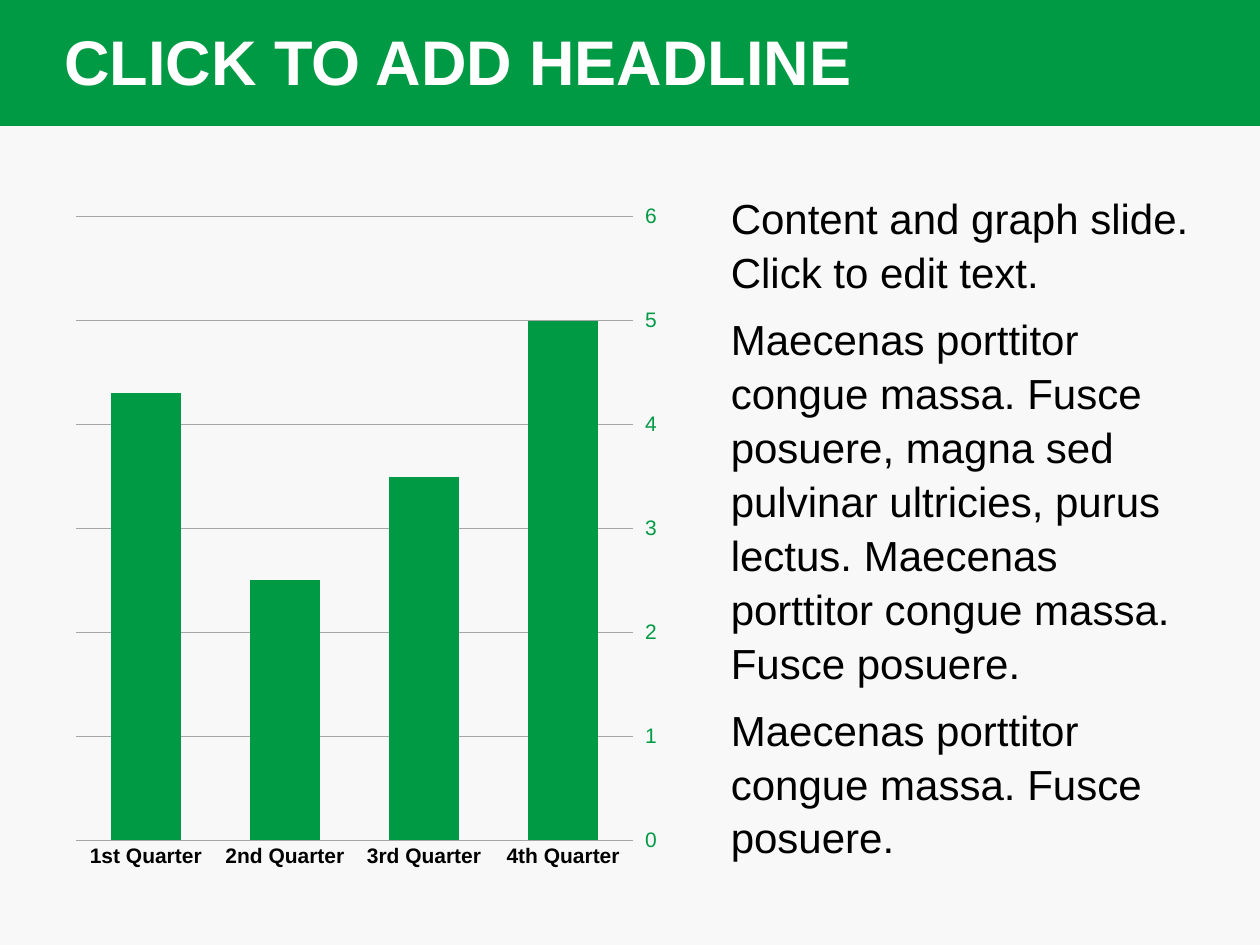
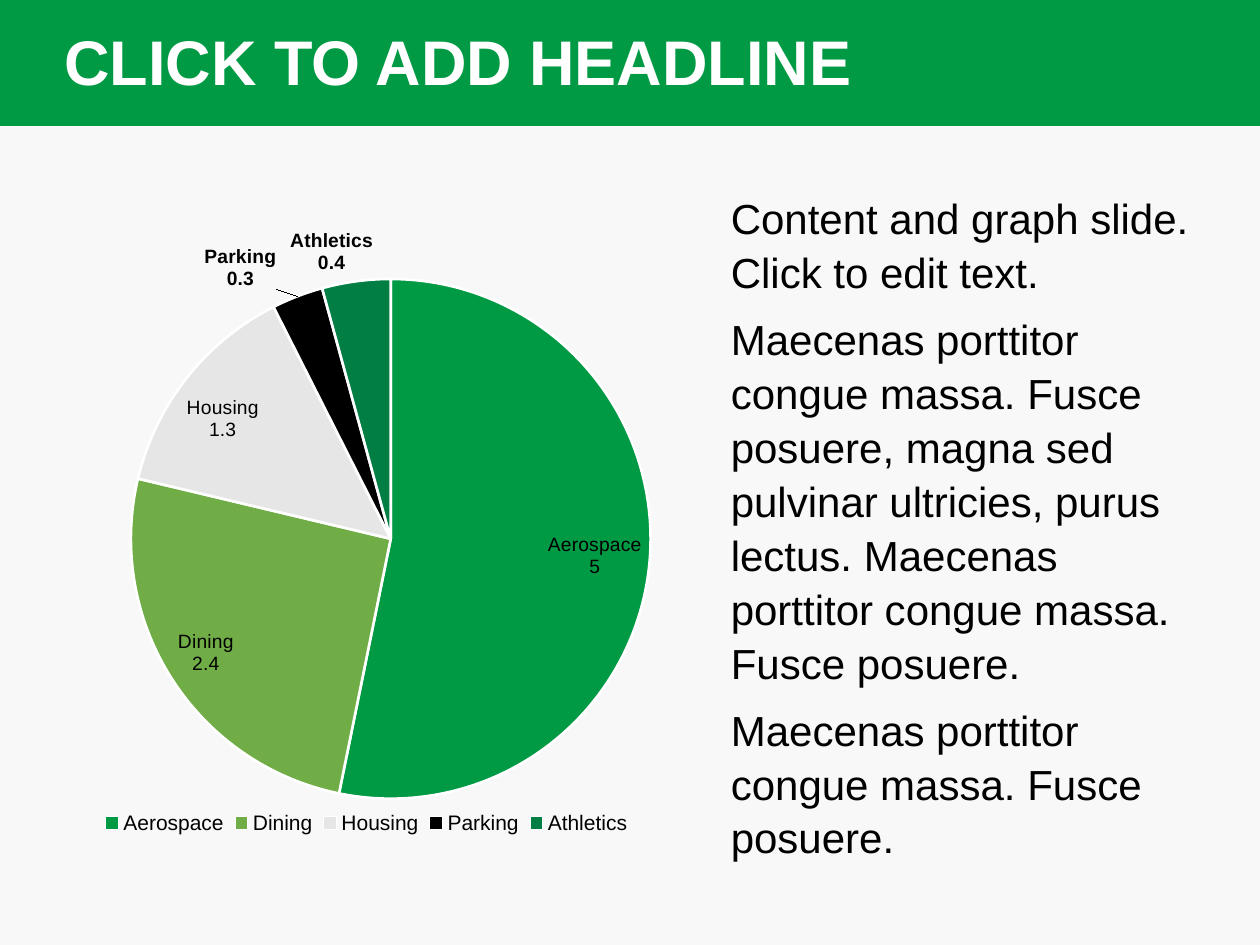
from lxml import etree
from pptx import Presentation
from pptx.chart.data import CategoryChartData
from pptx.dml.color import RGBColor
from pptx.enum import chart as ch, shapes, text
from pptx.oxml import parse_xml
from pptx.oxml.ns import nsdecls, qn
from pptx.util import Pt

GREEN, WHITE, BLACK, GREY = "009A44", "FFFFFF", "000000", "A5A5A5"
BACKGROUND = "F8F8F8"
SLICE_COLOURS = [GREEN, "70AD47", "E7E6E6", BLACK, "007E43"]
LABEL_SHIFTS = {"Aerospace": (0, 0.02), "Housing": (-0.01, 0.02),
                "Parking": (-0.03, 0), "Athletics": (0.03, 0)}
SLIDE_SIZE = (720, 540)
BAND_BOX = (0, 0, 720, 72)
TITLE_BOX = (36.72, 13.7, 540, 46.8)
CHART_BOX = (36.72, 108, 345.6, 396)
BODY_BOX = (417.6, 108, 266.4, 396)
HEADLINE = "CLICK TO ADD HEADLINE"
BODY = [
    "Content and graph slide. Click to edit text.",
    "Maecenas porttitor congue massa. Fusce posuere, magna sed pulvinar "
    "ultricies, purus lectus. Maecenas porttitor congue massa. Fusce posuere.",
    "Maecenas porttitor congue massa. Fusce posuere.",
]


def rgb(value):
    return RGBColor.from_string(value)


def style_font(font, size, colour=BLACK, bold=False, name="Arial"):
    font.name = name
    font.size = Pt(size)
    font.bold = bold
    font.color.rgb = rgb(colour)


def fill_solid(fill, colour):
    fill.solid()
    fill.fore_color.rgb = rgb(colour)


def style_line(line, colour, width):
    line.color.rgb = rgb(colour)
    line.width = Pt(width)


def place(shape, box):
    shape.left, shape.top, shape.width, shape.height = map(Pt, box)


def set_frame(frame, margins, anchor):
    frame.margin_left, frame.margin_top, frame.margin_right, frame.margin_bottom = map(Pt, margins)
    frame.vertical_anchor = anchor
    frame.auto_size = text.MSO_AUTO_SIZE.NONE
    frame.word_wrap = True


def set_layout(parent, index, inner=False, **fractions):
    for old in parent.findall(qn("c:layout")):
        parent.remove(old)
    layout = parse_xml(f"<c:layout {nsdecls('c')}><c:manualLayout/></c:layout>")
    settings = {"layoutTarget": "inner"} if inner else {}
    if "w" in fractions:
        settings.update(xMode="edge", yMode="edge")
    for tag, value in {**settings, **fractions}.items():
        etree.SubElement(layout[0], qn(f"c:{tag}")).set("val", str(value))
    parent.insert(index, layout)


def add_band(slide, box):
    band = slide.shapes.add_shape(shapes.MSO_SHAPE.RECTANGLE, *map(Pt, box))
    band.shadow.inherit = False
    fill_solid(band.fill, GREEN)
    band.line.fill.background()
    slide.slide_layout.shapes.element.insert(2, band.element)


def fill_title(title, box):
    place(title, box)
    frame = title.text_frame
    frame.text = HEADLINE
    set_frame(frame, (0, 3.6, 7.2, 3.6), text.MSO_ANCHOR.MIDDLE)
    headline = frame.paragraphs[0]
    headline.alignment = text.PP_ALIGN.LEFT
    headline.line_spacing = 0.9
    style_font(headline.runs[0].font, 36, WHITE, True)


def fill_body(body, box):
    place(body, box)
    frame = body.text_frame
    frame.text = "\n".join(BODY)
    set_frame(frame, (0, 0, 0, 0), text.MSO_ANCHOR.TOP)
    for number, paragraph in enumerate(frame.paragraphs):
        properties = paragraph._p.get_or_add_pPr()
        properties.set("marL", "0")
        properties.set("indent", "0")
        etree.SubElement(properties, qn("a:buNone"))
        paragraph.alignment = text.PP_ALIGN.LEFT
        paragraph.line_spacing = Pt(30.8)
        paragraph.space_before = Pt(7.5 if number else 0)
        style_font(paragraph.runs[0].font, 24)


def add_chart(slide, kind, box, values, plot_box):
    data = CategoryChartData()
    data.categories = list(values)
    data.add_series("Series 1", list(values.values()))
    chart = slide.shapes.add_chart(kind, *map(Pt, box), data).chart
    chart.has_title = False
    chart.has_legend = False
    style_font(chart.font, 10, name="Calibri")
    plot_area = chart._chartSpace.chart.plotArea
    set_layout(plot_area, 0, True, **dict(zip("xywh", plot_box)))
    return chart


def add_quarter_columns(slide, box):
    values = {"1st Quarter": 4.3, "2nd Quarter": 2.5, "3rd Quarter": 3.5, "4th Quarter": 5}
    chart = add_chart(slide, ch.XL_CHART_TYPE.COLUMN_CLUSTERED, box, values,
                      (0.02, 0.04, 0.92, 0.9))
    columns = chart.plots[0]
    columns.gap_width, columns.overlap = 100, -24
    columns.vary_by_categories = False
    fill_solid(columns.series[0].format.fill, GREEN)

    quarters, scale = chart.category_axis, chart.value_axis
    for axis in (quarters, scale):
        axis.major_tick_mark = axis.minor_tick_mark = ch.XL_TICK_MARK.NONE
    quarters.has_major_gridlines = False
    style_font(quarters.tick_labels.font, 12, bold=True)
    style_line(quarters.format.line, GREY, 0.75)
    scale.minimum_scale, scale.maximum_scale, scale.major_unit = 0, 6, 1
    scale.tick_label_position = ch.XL_TICK_LABEL_POSITION.HIGH
    style_font(scale.tick_labels.font, 12, GREEN)
    scale.format.line.fill.background()
    style_line(scale.major_gridlines.format.line, GREY, 0.75)


def show_category(labels):
    labels.find(qn("c:showCatName")).set("val", "1")
    separator = parse_xml(f"<c:separator {nsdecls('c')}>\n</c:separator>")
    labels.find(qn("c:showBubbleSize")).addnext(separator)


def add_department_pie(slide, box):
    values = {"Aerospace": 5, "Dining": 2.4, "Housing": 1.3, "Parking": 0.3, "Athletics": 0.4}
    chart = add_chart(slide, ch.XL_CHART_TYPE.PIE, box, values, (0.11, 0.13, 0.86, 0.75))
    departments = chart.plots[0].series[0]
    labels = departments.data_labels
    labels.show_value = True
    style_font(labels.font, 11, bold=True)
    show_category(labels._element)

    position = ch.XL_LABEL_POSITION
    for index, (name, value) in enumerate(values.items()):
        point = departments.points[index]
        fill_solid(point.format.fill, SLICE_COLOURS[index])
        style_line(point.format.line, WHITE, 1.5)
        small = value < 1
        label = point.data_label
        style_font(label.font, 11, bold=small)
        label.position = position.OUTSIDE_END if small else position.INSIDE_END
        label_xml = label._get_or_add_dLbl()
        show_category(label_xml)
        if name in LABEL_SHIFTS:
            set_layout(label_xml, 1, **dict(zip("xy", LABEL_SHIFTS[name])))

    chart.has_legend = True
    legend = chart.legend
    legend.position = ch.XL_LEGEND_POSITION.BOTTOM
    legend.include_in_layout = False
    style_font(legend.font, 12)
    set_layout(legend._element, 1, x=0.05, y=0.89, w=0.9, h=0.05)


def add_content_slide(prs, add_graph):
    slide = prs.slides.add_slide(prs.slide_layouts[1])
    fill_title(slide.shapes.title, TITLE_BOX)
    add_graph(slide, CHART_BOX)
    fill_body(slide.placeholders[1], BODY_BOX)
    return slide


def main():
    prs = Presentation()
    prs.slide_width, prs.slide_height = map(Pt, SLIDE_SIZE)
    fill_solid(prs.slide_master.background.fill, BACKGROUND)
    columns_slide = add_content_slide(prs, add_quarter_columns)
    add_band(columns_slide, BAND_BOX)
    add_content_slide(prs, add_department_pie)
    prs.save("out.pptx")


if __name__ == "__main__":
    main()
